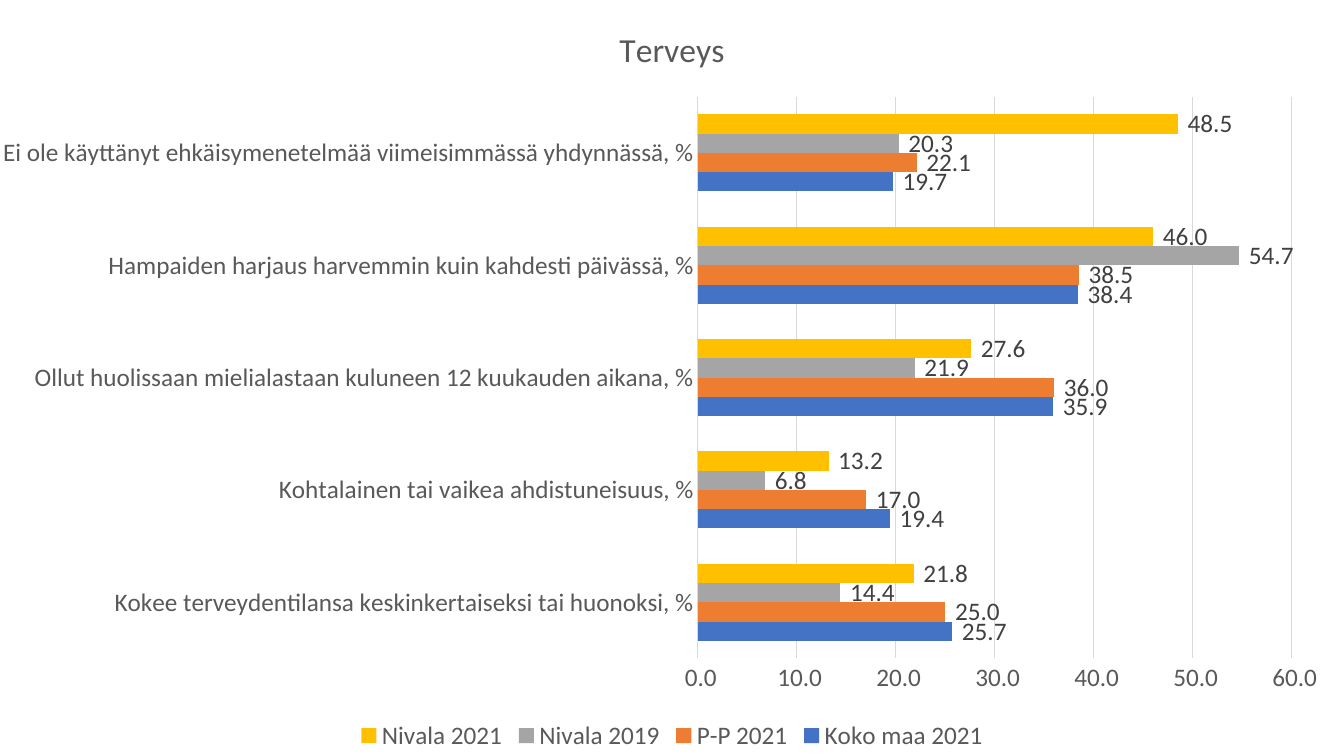
from pptx import Presentation
from pptx.chart.data import CategoryChartData
from pptx.dml.color import RGBColor
from pptx.enum.chart import XL_CHART_TYPE, XL_LABEL_POSITION, XL_LEGEND_POSITION, XL_TICK_MARK
from pptx.util import Cm, Pt

BAR = XL_CHART_TYPE.BAR_CLUSTERED
OUTER = XL_LABEL_POSITION.OUTSIDE_END
BOTTOM = XL_LEGEND_POSITION.BOTTOM
NO_TICK = XL_TICK_MARK.NONE

WIDE, HIGH = Cm(33.87), Cm(19.05)
FORMAT = r"#\ ##0.0"
GREY, PALE, DARK = "595959", "D9D9D9", "404040"

TOPICS = [
    "Kokee terveydentilansa keskinkertaiseksi tai huonoksi, %",
    "Kohtalainen tai vaikea ahdistuneisuus, %",
    "Ollut huolissaan mielialastaan kuluneen 12 kuukauden aikana, %",
    "Hampaiden harjaus harvemmin kuin kahdesti päivässä, %",
    "Ei ole käyttänyt ehkäisymenetelmää viimeisimmässä yhdynnässä, %",
]
GROUPS = [
    ("Koko maa 2021", "4472C4", [25.7, 19.4, 35.9, 38.4, 19.7]),
    ("P-P 2021", "ED7D31", [25, 17, 36, 38.5, 22.1]),
    ("Nivala 2019", "A5A5A5", [14.4, 6.8, 21.9, 54.7, 20.3]),
    ("Nivala 2021", "FFC000", [21.8, 13.2, 27.6, 46, 48.5]),
]


def color(code):
    return RGBColor.from_string(code)


def assign(item, values):
    for name, value in values.items():
        setattr(item, name, value)


def style_font(font, size, code):
    assign(font, {"name": "Calibri", "size": Pt(size), "bold": False})
    font.color.rgb = color(code)


def style_line(line):
    line.width = Pt(0.75)
    line.color.rgb = color(PALE)


def style_title(chart):
    frame = chart.chart_title.text_frame
    frame.text = "Terveys"
    style_font(frame.paragraphs[0].runs[0].font, 24, GREY)
    chart.chart_title.include_in_layout = False


def style_axes(chart):
    topic, value = chart.category_axis, chart.value_axis
    for axis in (topic, value):
        assign(axis, {"major_tick_mark": NO_TICK, "minor_tick_mark": NO_TICK})
        style_font(axis.tick_labels.font, 18, GREY)
    style_line(topic.format.line)
    value.format.line.fill.background()
    style_line(value.major_gridlines.format.line)
    assign(value.tick_labels, {"number_format": FORMAT, "number_format_is_linked": False})
    assign(value, {"minimum_scale": 0, "maximum_scale": 60, "major_unit": 10})


def style_bars(plot):
    assign(plot, {"gap_width": 182, "overlap": 0, "vary_by_categories": False})
    for bars, (_, code, _) in zip(plot.series, GROUPS):
        bars.format.fill.solid()
        bars.format.fill.fore_color.rgb = color(code)
        bars.invert_if_negative = False
        labels = bars.data_labels
        assign(labels, {
            "show_value": True, "position": OUTER,
            "number_format": FORMAT, "number_format_is_linked": False,
        })
        style_font(labels.font, 18, DARK)


def style_legend(chart):
    chart.has_legend = True
    assign(chart.legend, {"position": BOTTOM, "include_in_layout": False})
    style_font(chart.legend.font, 18, GREY)


def add_health(slide, left, top, width, height):
    data = CategoryChartData(number_format=FORMAT)
    data.categories = TOPICS
    for name, _, values in GROUPS:
        data.add_series(name, values)
    chart = slide.shapes.add_chart(BAR, left, top, width, height, data).chart
    style_font(chart.font, 18, "000000")
    style_title(chart)
    style_axes(chart)
    style_bars(chart.plots[0])
    style_legend(chart)


def main():
    deck = Presentation()
    assign(deck, {"slide_width": WIDE, "slide_height": HIGH})
    slide = deck.slides.add_slide(deck.slide_layouts[6])
    add_health(slide, 0, 0, WIDE, HIGH)
    deck.save("out.pptx")


if __name__ == "__main__":
    main()
